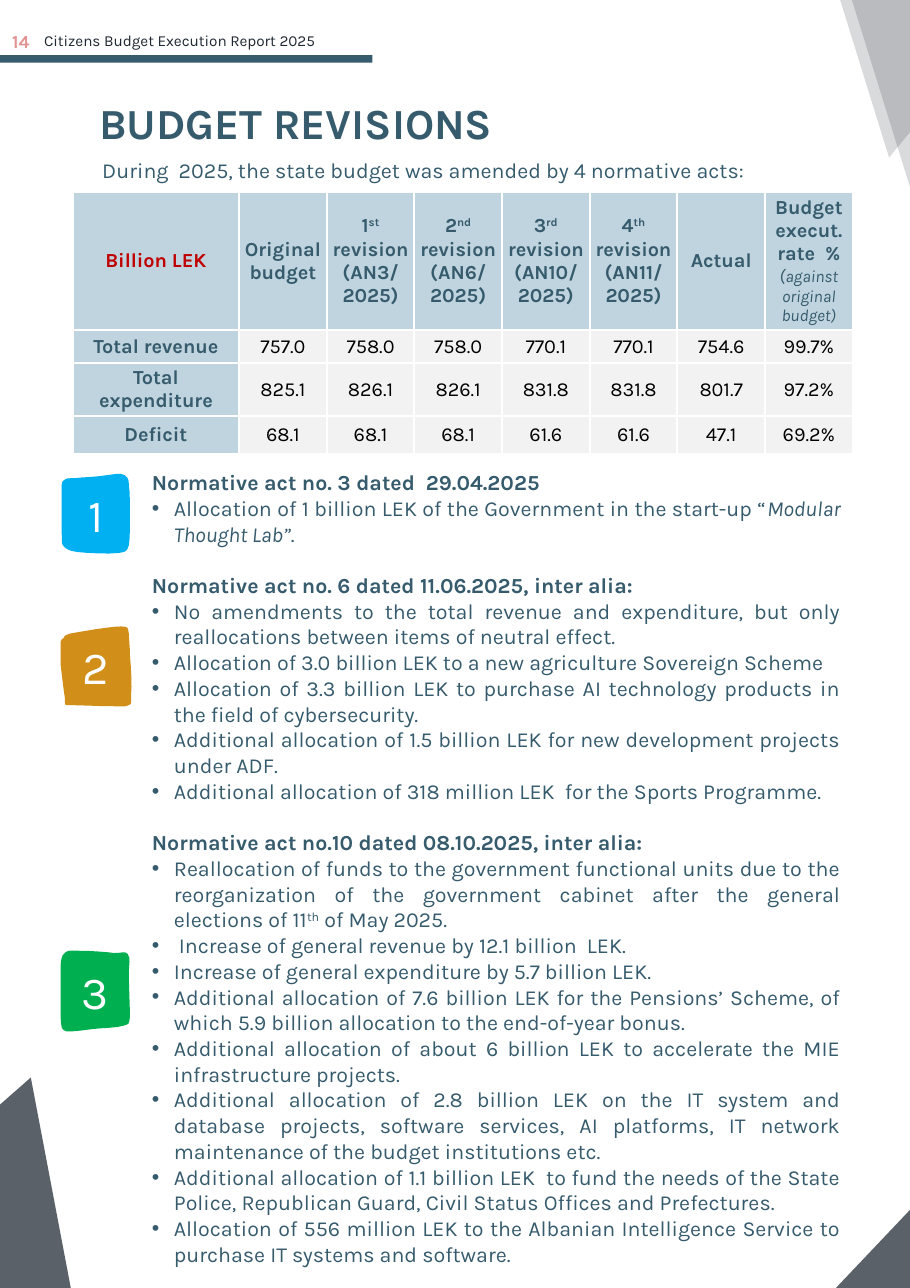
from dataclasses import dataclass, replace

from lxml import etree
from pptx import Presentation
from pptx.dml.color import RGBColor
from pptx.enum.shapes import MSO_SHAPE
from pptx.enum.text import MSO_ANCHOR, MSO_AUTO_SIZE, PP_ALIGN
from pptx.oxml.ns import qn
from pptx.util import Inches, Pt

RECT = MSO_SHAPE.RECTANGLE
MIDDLE = MSO_ANCHOR.MIDDLE
GROW = MSO_AUTO_SIZE.SHAPE_TO_FIT_TEXT
LEFT, CENTER, FULL = PP_ALIGN.LEFT, PP_ALIGN.CENTER, PP_ALIGN.JUSTIFY
FONT = "Karla"
COLORS = {
    "teal": "365B6D", "ink": "1E2732", "pink": "E49393", "red": "C00000",
    "head": "BFD4DF", "cell": "F2F2F2", "black": "000000", "white": "FFFFFF",
    "blue": "00B0F0", "gold": "D18F19", "green": "00B050",
}
Point = tuple[float, float]


@dataclass(frozen=True)
class Bit:
    text: str
    size: float = 14
    color: str = "teal"
    bold: bool = False
    slant: bool = False
    raised: bool = False


@dataclass(frozen=True)
class Shard:
    points: list[Point]
    alpha: int


@dataclass(frozen=True)
class Badge:
    label: str
    color: str
    start: Point
    curves: list[tuple[float, ...]]


@dataclass(frozen=True)
class Act:
    title: str
    items: list[list[Bit]]


@dataclass(frozen=True)
class Label:
    box: tuple[float, float, float, float]
    bit: Bit
    lead: float | None = None


SHARDS = [
    Shard([(8.32, 1.89), (7.59, -0.46), (9.89, -0.01)], 17),
    Shard([(9.22, 9.97), (10.1, 13.07), (7, 12.31)], 73),
    Shard([(8.07, 1.43), (7.34, -0.92), (9.63, -0.47)], 17),
    Shard([(0.28, 9.78), (0.88, 12.94), (-2.14, 11.91)], 73),
]
BADGES = [
    Badge("1", "blue", (0.56, 4.45), [
        (0.56, 4.53, 0.56, 4.75, 0.56, 4.84), (0.57, 4.92, 0.55, 4.93, 0.58, 4.96),
        (0.6, 4.98, 0.62, 5, 0.7, 5.01), (0.78, 5.02, 0.99, 5.03, 1.07, 5.02),
        (1.14, 5.01, 1.15, 5.01, 1.17, 4.95), (1.18, 4.89, 1.18, 4.77, 1.18, 4.68),
        (1.18, 4.59, 1.18, 4.46, 1.17, 4.41), (1.17, 4.35, 1.16, 4.34, 1.15, 4.33),
        (1.13, 4.31, 1.13, 4.31, 1.09, 4.3), (1.05, 4.3, 0.92, 4.32, 0.92, 4.32),
        (0.84, 4.33, 0.76, 4.33, 0.68, 4.34), (0.62, 4.34, 0.6, 4.34, 0.58, 4.36),
        (0.56, 4.38, 0.56, 4.37, 0.56, 4.45)]),
    Badge("2", "gold", (0.55, 6.03), [
        (0.56, 6.11, 0.58, 6.28, 0.59, 6.34), (0.59, 6.4, 0.59, 6.39, 0.6, 6.4),
        (0.73, 6.4, 0.87, 6.41, 1, 6.41), (1.1, 6.41, 1.14, 6.42, 1.17, 6.4),
        (1.2, 6.39, 1.19, 6.38, 1.19, 6.31), (1.2, 6.23, 1.19, 6.05, 1.18, 5.95),
        (1.18, 5.86, 1.17, 5.8, 1.17, 5.75), (1.16, 5.71, 1.17, 5.7, 1.14, 5.69),
        (1.1, 5.68, 1.03, 5.69, 0.95, 5.7), (0.86, 5.71, 0.7, 5.74, 0.64, 5.75),
        (0.58, 5.77, 0.59, 5.77, 0.58, 5.79), (0.56, 5.8, 0.55, 5.81, 0.55, 5.85),
        (0.55, 5.89, 0.55, 5.95, 0.55, 6.03)]),
    Badge("3", "green", (0.55, 8.76), [
        (0.55, 8.86, 0.55, 9.13, 0.55, 9.23), (0.56, 9.33, 0.55, 9.34, 0.6, 9.36),
        (0.64, 9.37, 0.84, 9.34, 0.84, 9.34), (0.93, 9.33, 1.06, 9.33, 1.12, 9.31),
        (1.17, 9.29, 1.17, 9.31, 1.18, 9.23), (1.18, 9.15, 1.17, 8.93, 1.17, 8.83),
        (1.17, 8.74, 1.19, 8.7, 1.16, 8.66), (1.14, 8.63, 1.11, 8.65, 1.04, 8.65),
        (0.97, 8.64, 0.82, 8.63, 0.75, 8.63), (0.67, 8.63, 0.63, 8.62, 0.6, 8.64),
        (0.57, 8.67, 0.56, 8.66, 0.55, 8.76)]),
]
ACTS = [
    Act("Normative act no. 3 dated  29.04.2025", [
        [Bit("Allocation of 1 billion LEK of the Government in the start-up “"),
         Bit("Modular Thought Lab”", slant=True), Bit(".")]]),
    Act("Normative act no. 6 dated 11.06.2025, inter alia:", [
        [Bit("No amendments to the total revenue and expenditure, but only reallocations between items of neutral effect.")],
        [Bit("Allocation of 3.0 billion LEK to a new agriculture Sovereign Scheme")],
        [Bit("Allocation of 3.3 billion LEK to purchase AI technology products in the field of cybersecurity.")],
        [Bit("Additional allocation of 1.5 billion LEK for new development projects under ADF.")],
        [Bit("Additional allocation of 318 million LEK  for the Sports Programme.")]]),
    Act("Normative act no.10 dated 08.10.2025, inter alia:", [
        [Bit("Reallocation of funds to the government functional units due to the reorganization of the government cabinet after the general elections of 11"),
         Bit("th", raised=True), Bit(" of May 2025.")],
        [Bit(" Increase of general revenue by 12.1 billion  LEK.")],
        [Bit("Increase of general expenditure by 5.7 billion LEK.")],
        [Bit("Additional allocation of 7.6 billion LEK for the Pensions’ Scheme, of which 5.9 billion allocation to the end-of-year bonus.")],
        [Bit("Additional allocation of about 6 billion LEK to accelerate the MIE infrastructure projects.")],
        [Bit("Additional allocation of 2.8 billion LEK on the IT system and database projects, software services, AI platforms, IT network maintenance of the budget institutions etc.")],
        [Bit("Additional allocation of 1.1 billion LEK  to fund the needs of the State Police, Republican Guard, Civil Status Offices and Prefectures.")],
        [Bit("Allocation of 556 million LEK to the Albanian Intelligence Service to purchase IT systems and software.")]]),
]
LABELS = [
    Label((0.9, 0.8, 6.6, 0.49), Bit("BUDGET REVISIONS", 28, bold=True), 39.2),
    Label((0.4, 0.26, 3.03, 0.18), Bit("Citizens Budget Execution Report 2025", 10, "ink"), 14),
    Label((0.11, 0.24, 0.21, 0.21), Bit("14", 12, "pink", True), 16.8),
    Label((0.83, 1.38, 6.6, 0.34), Bit("During  2025, the state budget was amended by 4 normative acts:")),
]
STRONG = Bit("", 13, bold=True)
SMALL = Bit("", 11, slant=True)
PLAIN = Bit("", 13, "black")
STEPS = [("1", "st", 3), ("2", "nd", 6), ("3", "rd", 10), ("4", "th", 11)]
HEADS = [
    [replace(STRONG, text="Billion LEK", color="red")],
    [replace(STRONG, text="Original budget")],
    *[[replace(STRONG, text=num), replace(STRONG, text=end, raised=True),
       replace(STRONG, text=f" revision (AN{act}/ 2025)")] for num, end, act in STEPS],
    [replace(STRONG, text="Actual")],
    [replace(STRONG, text="Budget execut. rate  % "), replace(SMALL, text="(", size=12),
     replace(SMALL, text="against original budget)")],
]
ROWS = [
    ("Total revenue", "757.0", "758.0", "758.0", "770.1", "770.1", "754.6", "99.7%"),
    ("Total expenditure", "825.1", "826.1", "826.1", "831.8", "831.8", "801.7", "97.2%"),
    ("Deficit", "68.1", "68.1", "68.1", "61.6", "61.6", "47.1", "69.2%"),
]
WIDTHS = [1.51] + [5.57 / 7] * 7
HEIGHTS = [0.84, 0.3, 0.3, 0.35]


def tint(name: str) -> RGBColor:
    return RGBColor.from_string(COLORS[name])


def write(para, bits: list[Bit], align=LEFT) -> None:
    para.alignment = align
    for bit in bits:
        run = para.add_run()
        run.text = bit.text
        font = run.font
        font.name, font.size = FONT, Pt(bit.size)
        font.bold, font.italic = bit.bold, bit.slant
        font.color.rgb = tint(bit.color)
        if bit.raised:
            run._r.get_or_add_rPr().set("baseline", "30000")


def paint(shape, color: str) -> None:
    shape.shadow.inherit = False
    shape.fill.solid()
    shape.fill.fore_color.rgb = tint(color)
    shape.line.fill.background()


def outline(slide, points: list[Point], color: str):
    dots = [(Inches(x), Inches(y)) for x, y in points]
    form = slide.shapes.build_freeform(*dots[0], scale=1.0)
    form.add_line_segments(dots[1:], close=True)
    shape = form.convert_to_shape()
    paint(shape, color)
    return shape


def trace(badge: Badge, steps: int = 4) -> list[Point]:
    points = [badge.start]
    for ax, ay, bx, by, cx, cy in badge.curves:
        sx, sy = points[-1]
        for k in range(1, steps + 1):
            t = k / steps
            u = 1 - t
            points.append(tuple(
                u**3 * s + 3 * u * u * t * a + 3 * u * t * t * b + t**3 * c
                for s, a, b, c in ((sx, ax, bx, cx), (sy, ay, by, cy))))
    return points


def add_frame(slide, box: tuple[float, ...]):
    frame = slide.shapes.add_textbox(*map(Inches, box)).text_frame
    frame.word_wrap, frame.auto_size = True, GROW
    return frame


def add_label(slide, label: Label) -> None:
    frame = add_frame(slide, label.box)
    para = frame.paragraphs[0]
    if label.lead:
        frame.margin_left = frame.margin_right = frame.margin_top = frame.margin_bottom = 0
        para.line_spacing = Pt(label.lead)
    write(para, [label.bit])


def add_acts(slide) -> None:
    frame = add_frame(slide, (1.28, 4.21, 6.45, 7.4))
    for k, act in enumerate(ACTS):
        para = frame.add_paragraph() if k else frame.paragraphs[0]
        if k:
            para.space_before = Pt(16.8)
        write(para, [Bit(act.title, bold=True)], FULL)
        for item in act.items:
            para = frame.add_paragraph()
            props = para._p.get_or_add_pPr()
            props.set("marL", str(Inches(0.2)))
            props.set("indent", str(Inches(-0.2)))
            etree.SubElement(props, qn("a:buFont"), typeface="Arial")
            etree.SubElement(props, qn("a:buChar"), char="•")
            write(para, item, FULL)


def fill_cell(cell, bits: list[Bit], color: str) -> None:
    cell.margin_left = cell.margin_right = cell.margin_top = cell.margin_bottom = Inches(0.02)
    cell.vertical_anchor = MIDDLE
    write(cell.text_frame.paragraphs[0], bits, CENTER)
    props = cell._tc.get_or_add_tcPr()
    for side in ("lnL", "lnR", "lnT", "lnB"):
        line = etree.SubElement(props, qn(f"a:{side}"), w=str(Pt(1.5)))
        solid = etree.SubElement(line, qn("a:solidFill"))
        etree.SubElement(solid, qn("a:srgbClr"), val=COLORS["white"])
    cell.fill.solid()
    cell.fill.fore_color.rgb = tint(color)


def add_grid(slide) -> None:
    body = [[[replace(PLAIN if c else STRONG, text=text)] for c, text in enumerate(row)]
            for row in ROWS]
    grid = slide.shapes.add_table(len(HEIGHTS), len(WIDTHS), Inches(0.66), Inches(1.74),
                                  Inches(sum(WIDTHS)), Inches(sum(HEIGHTS))).table
    grid.first_row = grid.horz_banding = False
    for col, width in zip(grid.columns, WIDTHS):
        col.width = Inches(width)
    for row, height in zip(grid.rows, HEIGHTS):
        row.height = Inches(height)
    for r, row in enumerate([HEADS, *body]):
        for c, bits in enumerate(row):
            fill_cell(grid.cell(r, c), bits, "cell" if r and c else "head")


def main() -> None:
    deck = Presentation()
    deck.slide_width, deck.slide_height = Inches(8.26), Inches(11.69)
    slide = deck.slides.add_slide(deck.slide_layouts[6])
    for shard in SHARDS:
        shape = outline(slide, shard.points, "ink")
        shade = next(shape._element.iter(qn("a:srgbClr")))
        etree.SubElement(shade, qn("a:alpha"), val=str(shard.alpha * 1000))
    for badge in BADGES:
        frame = outline(slide, trace(badge), badge.color).text_frame
        frame.vertical_anchor = MIDDLE
        write(frame.paragraphs[0], [Bit(badge.label, 30, "white")], CENTER)
    add_acts(slide)
    add_grid(slide)
    bar = slide.shapes.add_shape(RECT, 0, Inches(0.5), Inches(3.38), Inches(0.07))
    paint(bar, "teal")
    for label in LABELS:
        add_label(slide, label)
    deck.save("out.pptx")


if __name__ == "__main__":
    main()
